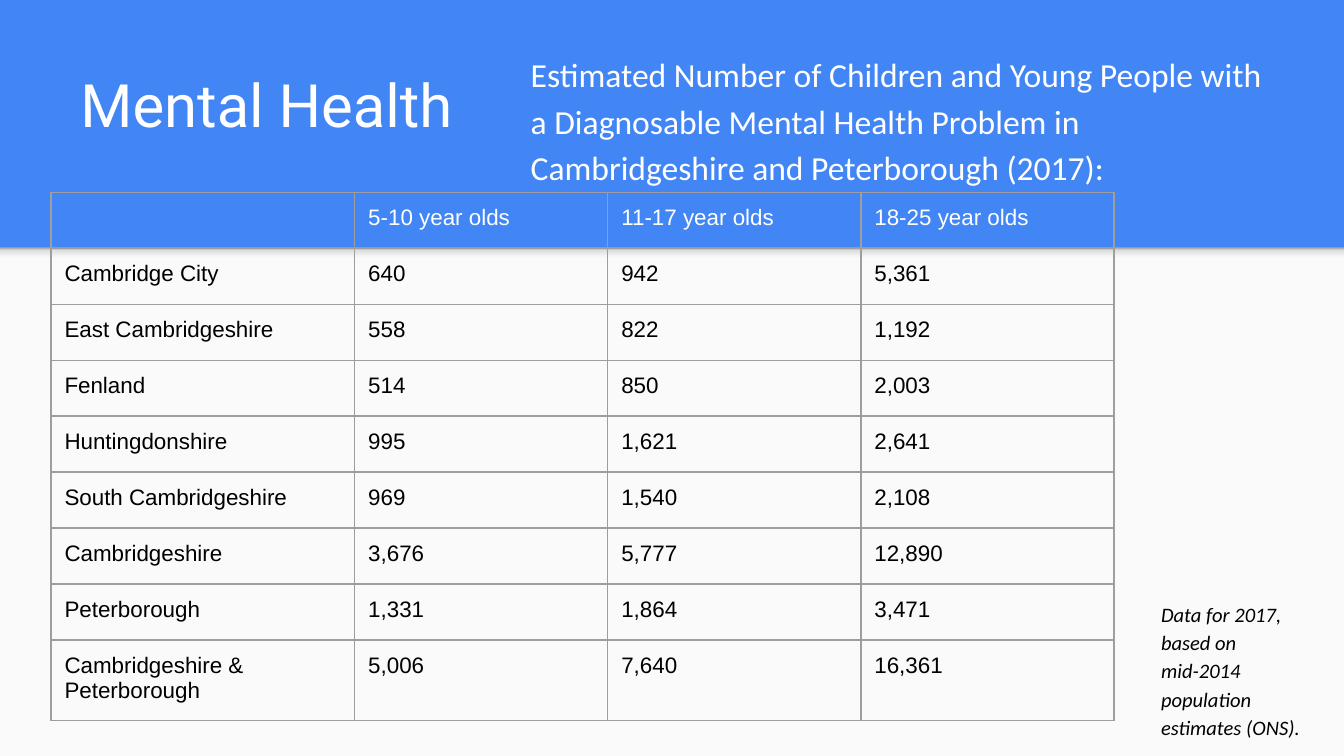
from dataclasses import dataclass

from lxml import etree
from pptx import Presentation
from pptx import util as u
from pptx.dml.color import RGBColor
from pptx.enum import shapes, text
from pptx.oxml import parse_xml
from pptx.oxml.ns import qn

WIDTH = 10
HEIGHT = WIDTH * 9 / 16
BAND = 1.84  # height of the blue header band
BLUE, PAPER, WHITE, BLACK, GREY = "4285F4", "FAFAFA", "FFFFFF", "000000", "9E9E9E"
SHADE_STOPS = [(0, "F9F9F9"), (36, "F9F9F9"), (80, "DEDEDE"), (100, "999999")]
DRAWING = "http://schemas.openxmlformats.org/drawingml/2006/main"
MARGINS = {f"margin_{side}": u.Inches(0.1) for side in ("left", "right", "top", "bottom")}

TABLE_LEFT, TABLE_TOP, TABLE_WIDTH = 0.38, 1.43, 7.91
NAME_COLUMN = 2.26
ROW = 5 / 12
ROWS = [
    ("", "5-10 year olds", "11-17 year olds", "18-25 year olds"),
    ("Cambridge City", "640", "942", "5,361"),
    ("East Cambridgeshire", "558", "822", "1,192"),
    ("Fenland", "514", "850", "2,003"),
    ("Huntingdonshire", "995", "1,621", "2,641"),
    ("South Cambridgeshire", "969", "1,540", "2,108"),
    ("Cambridgeshire", "3,676", "5,777", "12,890"),
    ("Peterborough", "1,331", "1,864", "3,471"),
    ("Cambridgeshire & Peterborough", "5,006", "7,640", "16,361"),
]
AGE_GROUPS = len(ROWS[0]) - 1
COLUMNS = [NAME_COLUMN] + [(TABLE_WIDTH - NAME_COLUMN) / AGE_GROUPS] * AGE_GROUPS


@dataclass
class Label:
    words: str
    left: float
    top: float
    width: float
    height: float
    font: str
    size: float
    colour: str
    italic: bool = False
    spacing: float = 1.0
    anchor: text.MSO_ANCHOR = text.MSO_ANCHOR.TOP


LABELS = [
    Label("Mental Health", 0.5, 0.3, 8.99, 0.84, "Roboto", 32, WHITE,
          anchor=text.MSO_ANCHOR.BOTTOM),
    Label("Estimated Number of Children and Young People with a Diagnosable "
          "Mental Health Problem in Cambridgeshire and Peterborough (2017):",
          3.85, 0.26, 5.79, 1.24, "Calibri", 18, WHITE, spacing=1.15),
    Label("Data for 2017, based on mid-2014 population estimates (ONS).",
          8.54, 4.35, 1.32, 1.06, "Calibri", 11, BLACK, italic=True, spacing=1.15),
]


def rgb(colour: str) -> RGBColor:
    return RGBColor.from_string(colour)


def apply(target, values: dict) -> None:
    for name, value in values.items():
        setattr(target, name, value)


def write(para, words: str, font: str, size: float, colour: str, italic: bool = False) -> None:
    span = para.add_run()
    span.text = words
    apply(span.font, {"name": font, "size": u.Pt(size), "italic": italic})
    span.font.color.rgb = rgb(colour)


def draw_panel(page, top: float, height: float, colour: str):
    panel = page.shapes.add_shape(shapes.MSO_SHAPE.RECTANGLE, 0, u.Inches(top),
                                  u.Inches(WIDTH), u.Inches(height))
    panel.shadow.inherit = False
    panel.fill.solid()
    panel.fill.fore_color.rgb = rgb(colour)
    panel.line.fill.background()
    return panel


def shade(panel) -> None:
    """Swap the solid fill for a gradient that darkens upwards."""
    stops = "".join(f'<a:gs pos="{share * 1000}"><a:srgbClr val="{colour}"/></a:gs>'
                    for share, colour in SHADE_STOPS)
    gradient = parse_xml(f'<a:gradFill xmlns:a="{DRAWING}"><a:gsLst>{stops}</a:gsLst>'
                         '<a:lin ang="16200000" scaled="0"/></a:gradFill>')
    properties = panel._element.spPr
    properties.replace(properties.find(qn("a:solidFill")), gradient)


def draw_label(page, label: Label) -> None:
    box = page.shapes.add_textbox(*map(u.Inches, (label.left, label.top,
                                                  label.width, label.height)))
    apply(box.text_frame, {**MARGINS, "word_wrap": True, "vertical_anchor": label.anchor})
    para = box.text_frame.paragraphs[0]
    para.line_spacing = label.spacing
    write(para, label.words, label.font, label.size, label.colour, label.italic)


def draw_borders(cell) -> None:
    properties = cell._tc.get_or_add_tcPr()
    for side in ("lnL", "lnR", "lnT", "lnB"):
        line = etree.SubElement(properties, qn(f"a:{side}"), w=str(u.Pt(0.75)))
        fill = etree.SubElement(line, qn("a:solidFill"))
        etree.SubElement(fill, qn("a:srgbClr"), val=GREY)


def draw_table(page) -> None:
    frame = page.shapes.add_table(len(ROWS), len(COLUMNS), *map(
        u.Inches, (TABLE_LEFT, TABLE_TOP, TABLE_WIDTH, ROW * len(ROWS))))
    table = frame.table
    apply(table, {"first_row": False, "horz_banding": False})
    for column, width in zip(table.columns, COLUMNS):
        column.width = u.Inches(width)
    for number, (row, values) in enumerate(zip(table.rows, ROWS)):
        row.height = u.Inches(ROW)
        for cell, words in zip(row.cells, values):
            draw_borders(cell)
            cell.fill.background()
            apply(cell, MARGINS)
            para = cell.text_frame.paragraphs[0]
            if words:
                write(para, words, "Arial", 12, BLACK if number else WHITE)
            else:  # keeps the empty cell from stretching its row
                etree.SubElement(para._p, qn("a:endParaRPr"), sz="1200")


def main() -> None:
    deck = Presentation()
    apply(deck, {"slide_width": u.Inches(WIDTH), "slide_height": u.Inches(HEIGHT)})
    page = deck.slides.add_slide(deck.slide_layouts[6])

    # Blue background with a pale body and a soft edge under the header
    page.background.fill.solid()
    page.background.fill.fore_color.rgb = rgb(BLUE)
    draw_panel(page, BAND, HEIGHT - BAND, PAPER)
    shade(draw_panel(page, BAND, 0.12, PAPER))

    # Title, table, then subtitle and source note
    title, *notes = LABELS
    draw_label(page, title)
    draw_table(page)
    for note in notes:
        draw_label(page, note)

    deck.save("out.pptx")


if __name__ == "__main__":
    main()
